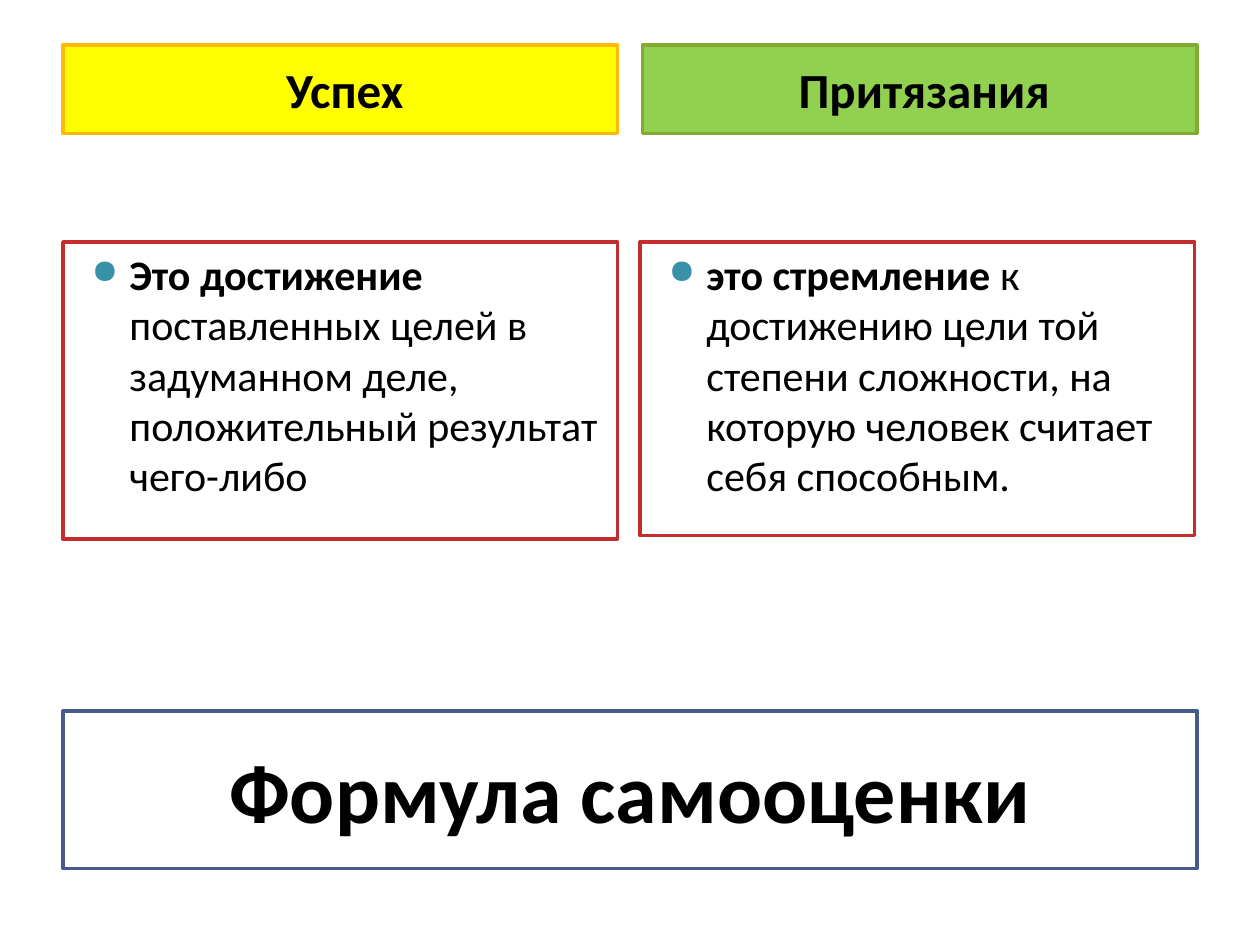
from lxml.etree import SubElement
from pptx import Presentation
from pptx.dml.color import RGBColor
from pptx.enum.shapes import MSO_SHAPE
from pptx.enum.text import MSO_ANCHOR, PP_ALIGN
from pptx.oxml.ns import qn
from pptx.util import Cm, Pt

LEFT = 1.27
COLUMN_WIDTH = 11.18
BLACK = "000000"
WHITE = "FFFFFF"


def color(value):
    return RGBColor.from_string(value)


def add_box(page, left, top, width, height, fill, line, anchor):
    box = page.shapes.add_shape(
        MSO_SHAPE.RECTANGLE, Cm(left), Cm(top), Cm(width), Cm(height))
    box.shadow.inherit = False
    box.fill.solid()
    box.fill.fore_color.rgb = color(fill)
    box.line.color.rgb = color(line)
    box.line.width = Pt(2)
    box.text_frame.word_wrap = True
    box.text_frame.vertical_anchor = anchor
    return box


def style_paragraph(paragraph, size, align, space_before=0):
    paragraph.alignment = align
    paragraph.space_before = Pt(space_before)
    paragraph.font.name = "Calibri"
    paragraph.font.size = Pt(size)
    paragraph.font.color.rgb = color(BLACK)


def set_indent(paragraph, margin, indent):
    properties = paragraph._p.get_or_add_pPr()
    properties.set("marL", str(Cm(margin)))
    properties.set("indent", str(Cm(indent)))
    return properties


def add_bullet(paragraph):
    properties = set_indent(paragraph, 1.09, -0.76)
    bullet_color = SubElement(properties, qn("a:buClr"))
    SubElement(bullet_color, qn("a:srgbClr"), val="3891A7")
    SubElement(properties, qn("a:buSzPct"), val="80000")
    SubElement(properties, qn("a:buChar"), char="●")


def add_heading(page, left, top, width, height, text, size, fill, line):
    box = add_box(page, left, top, width, height, fill, line, MSO_ANCHOR.MIDDLE)
    paragraph = box.text_frame.paragraphs[0]
    paragraph.text = text
    style_paragraph(paragraph, size, PP_ALIGN.CENTER)
    paragraph.font.bold = True
    return paragraph


def add_column_heading(page, left, text, fill, line):
    paragraph = add_heading(
        page, left, 0.91, COLUMN_WIDTH, 1.78, text, 28, fill, line)
    paragraph.space_before = Pt(1)
    set_indent(paragraph, 0.18, 0)


def add_definition(page, left, height, term, meaning):
    box = add_box(
        page, left, 4.88, COLUMN_WIDTH, height, WHITE, "C32D2E", MSO_ANCHOR.TOP)
    paragraph = box.text_frame.paragraphs[0]
    style_paragraph(paragraph, 24, PP_ALIGN.LEFT, 7)
    add_bullet(paragraph)
    for text, bold in ((term, True), (meaning, False)):
        span = paragraph.add_run()
        span.text = text
        span.font.bold = bold


def main():
    deck = Presentation()
    deck.slide_width, deck.slide_height = Cm(25.4), Cm(19.05)
    page = deck.slides.add_slide(deck.slide_layouts[6])

    add_heading(page, LEFT, 14.33, 22.86, 3.18,
                "Формула самооценки", 48, WHITE, "475A8D")
    add_column_heading(page, LEFT, "Успех", "FFFF00", "FEB80A")
    add_column_heading(page, 12.95, "Притязания", "92D050", "84AA33")
    add_definition(
        page, LEFT, 5.99, "Это достижение ",
        "поставленных целей в задуманном деле, "
        "положительный результат чего-либо")
    add_definition(
        page, 12.9, 5.92, "это стремление",
        " к достижению цели той степени сложности, "
        "на которую человек считает себя способным.")

    deck.save("out.pptx")


if __name__ == "__main__":
    main()
